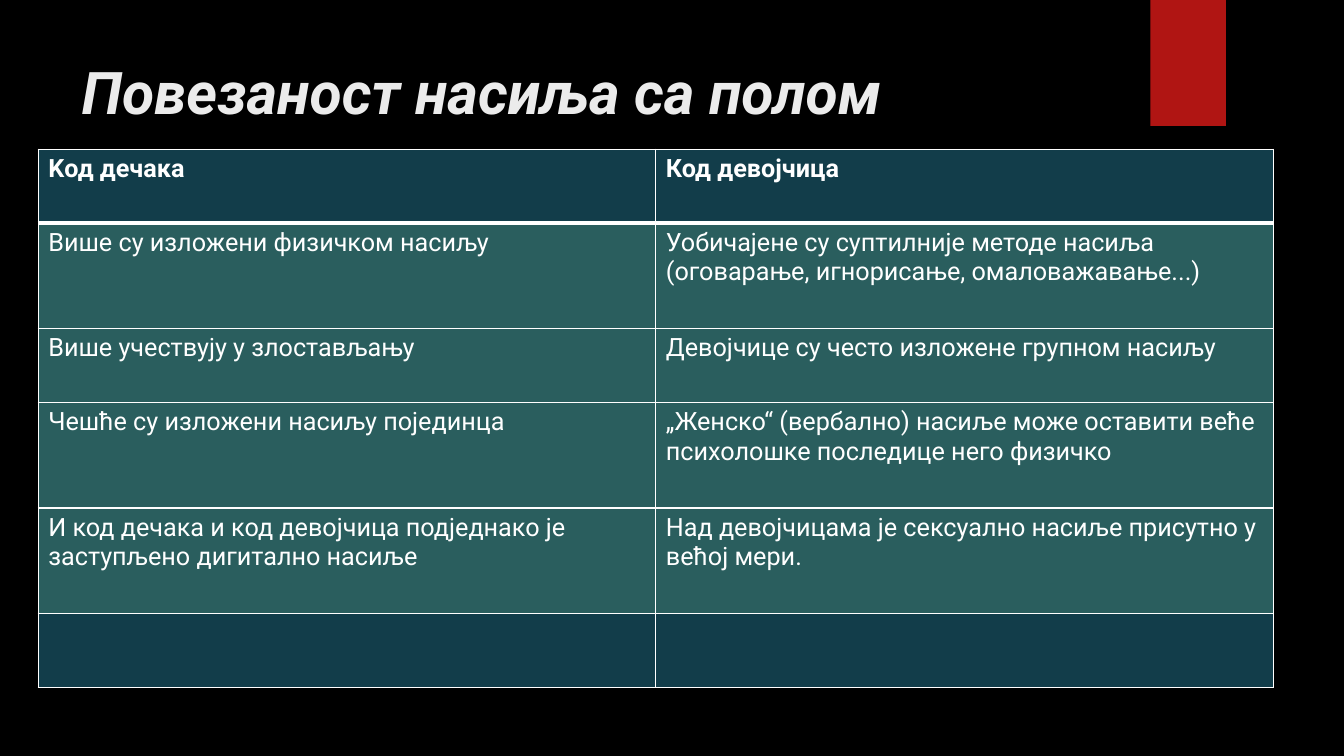
from lxml import etree
from pptx import Presentation
from pptx.dml.color import RGBColor
from pptx.enum.shapes import MSO_SHAPE
from pptx.enum.text import MSO_ANCHOR, PP_ALIGN
from pptx.oxml.ns import qn
from pptx.util import Inches, Pt

RECT = MSO_SHAPE.RECTANGLE
TOP = MSO_ANCHOR.TOP
LEFT = PP_ALIGN.LEFT

BLACK = RGBColor(0x00, 0x00, 0x00)
WHITE = RGBColor(0xFF, 0xFF, 0xFF)
PALE = RGBColor(0xEB, 0xEB, 0xEB)
RED = RGBColor(0xB0, 0x15, 0x13)
NAVY = RGBColor(0x12, 0x3D, 0x4A)
TEAL = RGBColor(0x2A, 0x5E, 0x5E)

HEAD = {"name": "Roboto", "size": Pt(42), "bold": True, "italic": True}
BODY = {"name": "Roboto", "size": Pt(18)}

ROWS = [
    ("Kод дечака", "Код девојчица"),
    ("Више су изложени физичком насиљу",
     "Уобичајене су суптилније методе насиља "
     "(оговарање, игнорисање, омаловажавање...)"),
    ("Више учествују у злостављању",
     "Девојчице су често изложене групном насиљу"),
    ("Чешће су изложени насиљу појединца",
     "„Женско“ (вербално) насиље може оставити веће "
     "психолошке последице него физичко"),
    ("И код дечака и код девојчица подједнако је "
     "заступљено дигитално насиље",
     "Над девојчицама је сексуално насиље присутно у већој мери."),
    ("", ""),
]
SHORT, TALL = 0.73, 1.05
HIGHS = [SHORT, TALL, SHORT, TALL, TALL, SHORT]


def style(font, form, color):
    for key, value in form.items():
        setattr(font, key, value)
    font.color.rgb = color


def add_flag(slide, box):
    flag = slide.shapes.add_shape(RECT, *map(Inches, box))
    flag.shadow.inherit = False
    flag.fill.solid()
    flag.fill.fore_color.rgb = RED
    flag.line.fill.background()


def add_title(slide, box, text):
    title = slide.shapes.title
    title.left, title.top, title.width, title.height = map(Inches, box)
    frame = title.text_frame
    frame.text = text
    frame.word_wrap = True
    frame.vertical_anchor = TOP
    para = frame.paragraphs[0]
    para.alignment = LEFT
    style(para.font, HEAD, PALE)


def add_edges(cell, widths):
    """Draw white cell borders; widths maps a side (L, R, T, B) to points."""
    props = cell._tc.get_or_add_tcPr()
    for side, width in widths.items():
        line = etree.SubElement(props, qn(f"a:ln{side}"), w=str(Pt(width)))
        fill = etree.SubElement(line, qn("a:solidFill"))
        etree.SubElement(fill, qn("a:srgbClr"), val=str(WHITE))


def add_grid(slide, box):
    cols = len(ROWS[0])
    grid = slide.shapes.add_table(len(ROWS), cols, *map(Inches, box)).table
    for col in grid.columns:
        col.width = Inches(box[2] / cols)
    for i, (high, texts) in enumerate(zip(HIGHS, ROWS)):
        grid.rows[i].height = Inches(high)
        edges = {"L": 1, "R": 1, "T": 3 if i == 1 else 1,
                 "B": 3 if i == 0 else 1}
        for j, text in enumerate(texts):
            cell = grid.cell(i, j)
            add_edges(cell, edges)
            cell.fill.solid()
            cell.fill.fore_color.rgb = NAVY if i in (0, len(ROWS) - 1) else TEAL
            cell.text = text
            style(cell.text_frame.paragraphs[0].font,
                  {**BODY, "bold": i == 0}, WHITE)


def main():
    deck = Presentation()
    deck.slide_width, deck.slide_height = Inches(13.33), Inches(7.5)
    slide = deck.slides.add_slide(deck.slide_layouts[5])
    slide.background.fill.solid()
    slide.background.fill.fore_color.rgb = BLACK
    add_flag(slide, (11.41, 0, 0.75, 1.25))
    add_title(slide, (0.71, 0.5, 10.29, 1.53), "Повезаност насиља са полом")
    add_grid(slide, (0.38, 1.48, 12.25, sum(HIGHS)))
    deck.save("out.pptx")


if __name__ == "__main__":
    main()
